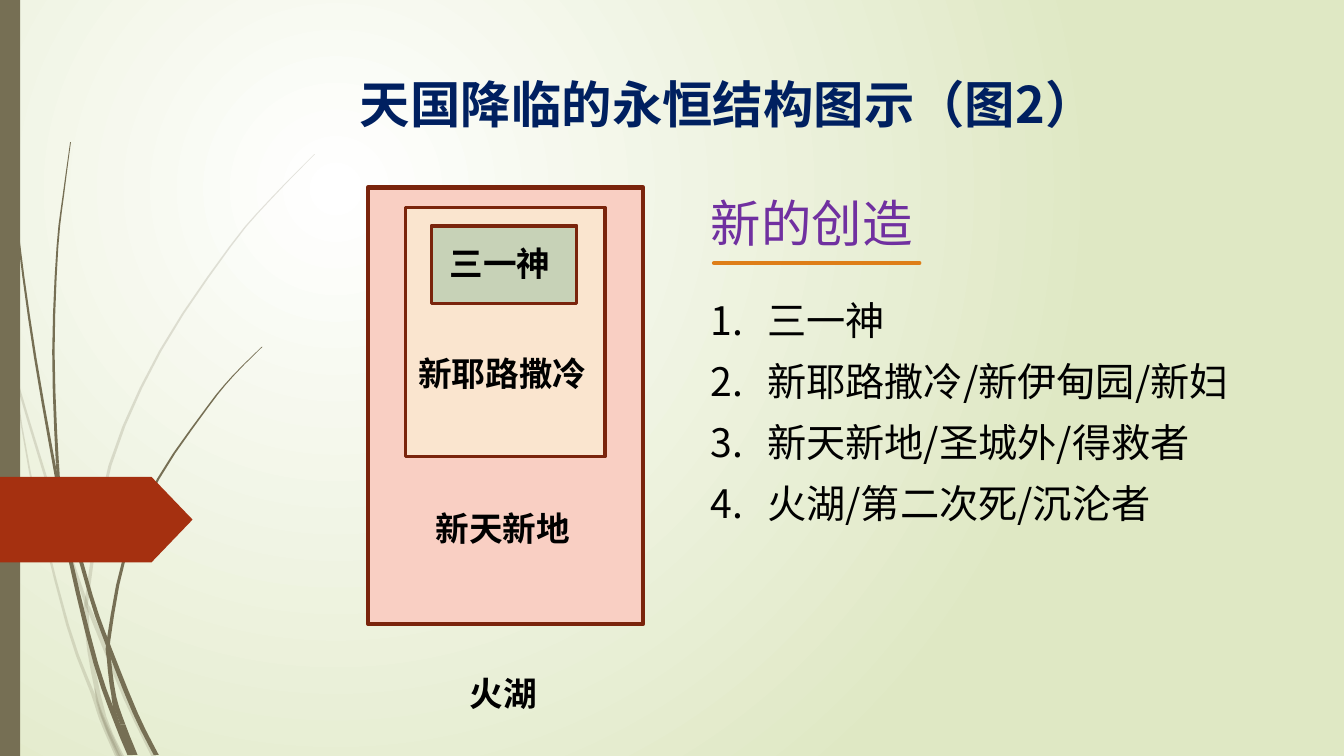
from dataclasses import dataclass
from lxml import etree
from pptx import Presentation
from pptx import util as u
from pptx.dml.color import RGBColor
from pptx.enum import shapes, text
from pptx.oxml.ns import qn

# Content
TITLE = "天国降临的永恒结构图示（图2）"
HEAD = "新的创造"
ITEMS = ["三一神", "新耶路撒冷/新伊甸园/新妇",
         "新天新地/圣城外/得救者", "火湖/第二次死/沉沦者"]
# Nested realms, outermost first: left, top, width, height, fill, line width
REALMS = [
    (3.65, 1.86, 2.73, 4.33, "F9CFC3", 3),
    (4.02, 2.06, 1.98, 2.47, "FAE5CF", 2.5),
    (4.28, 2.24, 1.44, 0.77, "C7D2B7", 2.5),
]
# Realm names: text, left, top, width
NAMES = [("三一神", 4.36, 2.36, 1.21), ("新耶路撒冷", 4.05, 3.45, 1.88),
         ("新天新地", 4.22, 4.99, 1.55), ("火湖", 4.56, 6.63, 0.88)]
# Grass blades from tip to root: joints (dot numbers), dots along the middle
PALE = [
    ((1, 4), [(0, 2.85), (0.1, 3.47), (0.16, 3.76), (0.6, 5.21), (0.85, 5.97),
              (0.9, 6.08), (1.25, 6.93), (1.53, 7.51)]),
    ((4,), [(0.11, 3.5), (0.3, 4.7), (0.67, 6.2), (0.92, 6.88), (1.01, 7.14),
            (1.17, 7.51)]),
    ((5, 6, 8), [(3.12, 1.53), (2.68, 1.98), (2.28, 2.45), (1.59, 3.48),
                 (1.09, 4.62), (0.87, 5.88), (0.86, 6.07), (0.89, 6.46),
                 (1.03, 7.11), (1.21, 7.51)]),
    ((), [(0.94, 6.83), (1, 7.07), (1.19, 7.51)]),
]
DARK = [
    ((4, 8), [(0.03, 0), (0.06, 1.1), (0.18, 2.33), (0.35, 3.55),
              (0.57, 4.79), (0.62, 5.05), (0.7, 5.56), (0.95, 6.58),
              (1.17, 7.2), (1.29, 7.49)]),
    ((4, 5, 7), [(0.7, 1.41), (0.63, 1.93), (0.57, 2.45), (0.53, 3.49),
                 (0.57, 4.6), (0.62, 4.88), (0.9, 5.91), (1.08, 6.42),
                 (1.34, 7.07), (1.55, 7.49)]),
    ((5, 6, 8), [(2.6, 3.44), (2.31, 3.73), (2.05, 4.05), (1.57, 4.75),
                 (1.24, 5.51), (1.08, 6.33), (1.08, 6.53), (1.13, 6.91),
                 (1.22, 7.19), (1.34, 7.49)]),
    ((), [(1.11, 6.91), (1.17, 7.17), (1.32, 7.49)]),
]


@dataclass(frozen=True)
class Theme:
    wide: float = 13.33
    high: float = 7.5
    sans: str = "Noto Sans CJK SC"
    label: str = "Noto Sans CJK TC"
    big: int = 36
    mid: int = 28
    small: int = 24
    ink: str = "000000"
    navy: str = "002060"
    plum: str = "7030A0"
    edge: str = "7A240C"
    rule: str = "DE7E18"
    stem: str = "766F54"
    flag: str = "A53010"
    glow: str = "FFFFFF"
    leaf: str = "DFE8C4"


T = Theme()


def rgb(code):
    return RGBColor.from_string(code)


def box(part, left, top, width, height):
    part.left, part.top = u.Inches(left), u.Inches(top)
    part.width, part.height = u.Inches(width), u.Inches(height)


def write(para, words, size=T.mid, font=T.sans, color=T.ink, bold=False,
          before=0, number=False):
    """Add a formatted run to a paragraph, numbered or plain."""
    para.alignment = text.PP_ALIGN.LEFT
    para.space_before = u.Pt(before)
    run = para.add_run()
    run.text = words
    run.font.size, run.font.bold = u.Pt(size), bold
    run.font.name = font
    run.font.color.rgb = rgb(color)
    east = etree.SubElement(run.font._element, qn("a:ea"))
    east.set("typeface", font)
    props = para._p.get_or_add_pPr()
    dent = u.Inches(0.56) if number else 0
    props.set("marL", str(dent))
    props.set("indent", str(-dent))
    mark = etree.SubElement(props, qn("a:buAutoNum" if number else "a:buNone"))
    if number:
        mark.set("type", "arabicPeriod")


def frame(part, wrap=True):
    body = part.text_frame
    body.word_wrap = wrap
    body.auto_size = text.MSO_AUTO_SIZE.NONE
    body.vertical_anchor = text.MSO_ANCHOR.TOP
    return body


def paint(shape, color, line=None, width=0, alpha=None):
    shape.shadow.inherit = False
    shape.fill.solid()
    shape.fill.fore_color.rgb = rgb(color)
    if alpha:
        tone = shape._element.spPr.find(qn("a:solidFill"))[0]
        etree.SubElement(tone, qn("a:alpha")).set("val", str(alpha * 1000))
    if line:
        shape.line.color.rgb = rgb(line)
        shape.line.width = u.Pt(width)
    else:
        shape.line.fill.background()


def curve(dots, steps):
    """Smooth path through the dots (Catmull-Rom)."""
    ends = [dots[0], *dots, dots[-1]]
    out = []
    for a, b, c, d in zip(ends, ends[1:], ends[2:], ends[3:]):
        for k in range(steps):
            t = k / steps
            out.append(tuple(
                (2 * q + (r - p) * t + (2 * p - 5 * q + 4 * r - s) * t ** 2
                 + (3 * q - p - 3 * r + s) * t ** 3) / 2
                for p, q, r, s in zip(a, b, c, d)))
    return out + [dots[-1]]


def blade(slide, joints, dots, alpha=None, steps=3, unit=1000):
    """Draw a tapering blade, in one piece between each pair of joints."""
    mid = curve(dots, steps)
    last = len(mid) - 1
    half = [0.025 * min(1, 0.15 + i / last) for i in range(last + 1)]
    left = [(max(0, x - h) * unit, y * unit) for (x, y), h in zip(mid, half)]
    right = [((x + h) * unit, y * unit) for (x, y), h in zip(mid, half)]
    cuts = [0, *(j * steps for j in joints), last]
    for a, b in zip(cuts, cuts[1:]):
        ring = left[a:b + 1] + right[a:b + 1][::-1]
        form = slide.shapes.build_freeform(*ring[0], scale=u.Inches(1) / unit)
        form.add_line_segments(ring[1:], close=True)
        paint(form.convert_to_shape(), T.stem, alpha=alpha)


def backdrop(slide):
    fill = slide.background.fill
    fill.gradient()
    for stop, tone, at in zip(fill.gradient_stops, (T.glow, T.leaf), (0, 1)):
        stop.color.rgb = rgb(tone)
        stop.position = at
    grad = slide.background._cSld.find(".//" + qn("a:gradFill"))
    grad.remove(grad.find(qn("a:lin")))
    way = etree.SubElement(grad, qn("a:path"))
    way.set("path", "circle")
    spot = etree.SubElement(way, qn("a:fillToRect"))
    for side, share in zip("ltrb", (50, 50, 100, 100)):
        spot.set(side, str(share * 1000))


def main():
    deck = Presentation()
    deck.slide_width, deck.slide_height = u.Inches(T.wide), u.Inches(T.high)
    slide = deck.slides.add_slide(deck.slide_layouts[1])
    add = slide.shapes
    kind = shapes.MSO_SHAPE
    backdrop(slide)

    # Grass, side bar and flag
    for blades, alpha in ((PALE, 20), (DARK, None)):
        for joints, dots in blades:
            blade(slide, joints, dots, alpha=alpha)
    bar = add.add_shape(kind.RECTANGLE, 0, 0, u.Inches(0.2), deck.slide_height)
    paint(bar, T.stem)
    flag = add.add_shape(kind.PENTAGON, 0, u.Inches(4.73),
                         u.Inches(1.91), u.Inches(0.85))
    flag.adjustments[0] = 0.48
    paint(flag, T.flag)

    # Nested realms and their names
    for *place, fill, width in REALMS:
        realm = add.add_shape(kind.RECTANGLE, *map(u.Inches, place))
        paint(realm, fill, T.edge, width)
    for words, *place in NAMES:
        name = add.add_textbox(*map(u.Inches, place), u.Inches(0.5))
        write(frame(name, wrap=False).paragraphs[0], words,
              size=T.small, font=T.label, bold=True)

    # Title
    box(add.title, 3.47, 0.68, 8.55, 0.71)
    write(frame(add.title).paragraphs[0], TITLE,
          size=T.big, color=T.navy, bold=True)

    # Heading, rule and numbered list
    part = slide.placeholders[1]
    box(part, 6.95, 1.86, 5.87, 3.46)
    body = frame(part)
    write(body.paragraphs[0], HEAD, size=T.big, color=T.plum)
    for i, words in enumerate(ITEMS):
        write(body.add_paragraph(), words, before=10 if i else 31, number=True)
    rule = add.add_connector(shapes.MSO_CONNECTOR.STRAIGHT, u.Inches(7.08),
                             u.Inches(2.61), u.Inches(9.12), u.Inches(2.61))
    rule.line.color.rgb = rgb(T.rule)
    rule.line.width = u.Pt(2.75)
    rule.line._ln.set("cap", "rnd")
    etree.SubElement(rule._element.spPr, qn("a:effectLst"))

    deck.save("out.pptx")


if __name__ == "__main__":
    main()
